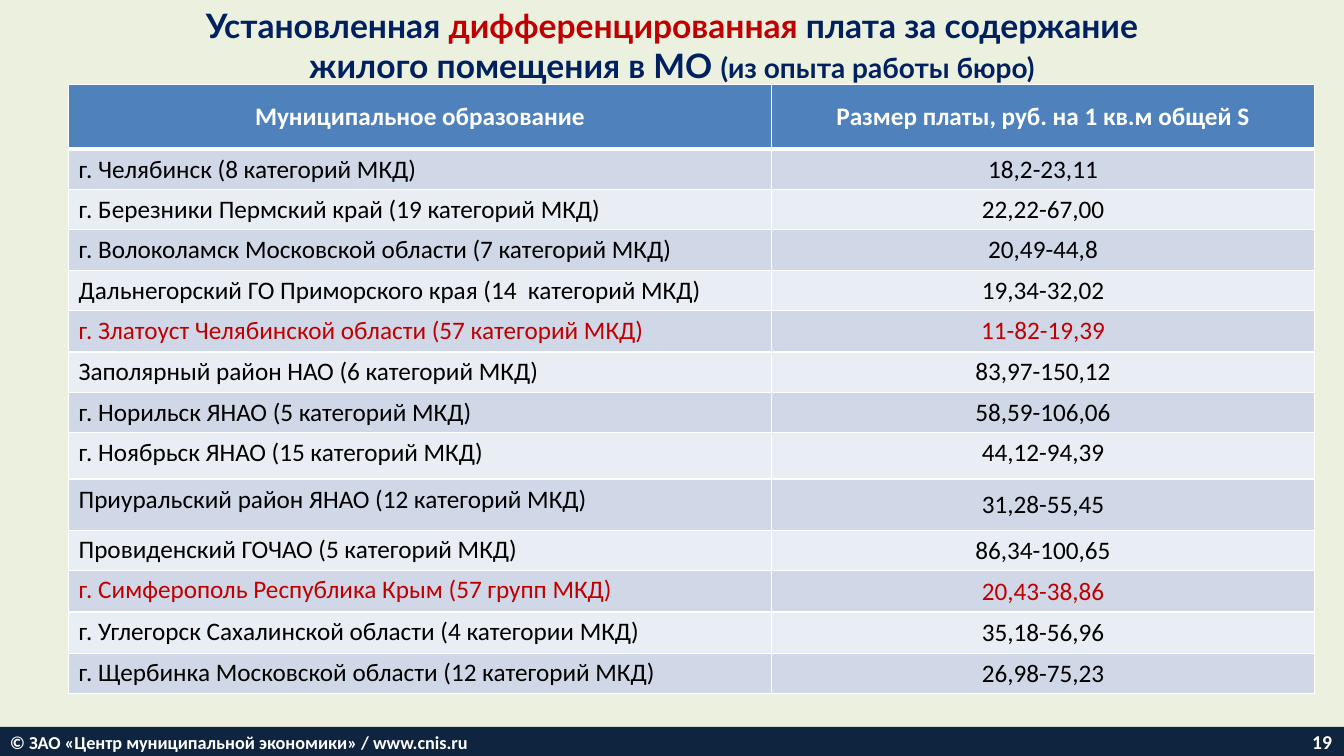
from collections import namedtuple

from lxml import etree
from pptx import Presentation
from pptx import util as u
from pptx.dml.color import RGBColor
from pptx.enum import shapes, text
from pptx.oxml import ns

WIDE, HIGH = 13.33, 7.5
Box = namedtuple("Box", "x y w h")


class Theme:
    page, navy, red = "EBF1DE", "002060", "C00000"
    head, bands = "4F81BD", ("D0D8E8", "E9EDF4")
    bar, white, black = "0F243E", "FFFFFF", "000000"
    body, display = "Calibri", "Lato"
    title, aside, cell, foot, num = 24, 20, 18, 13, 14


HEADS = ("Муниципальное образование", "Размер платы, руб. на 1 кв.м общей S")
# place, fee, row height
FEES = (
    ("г. Челябинск (8 категорий МКД)", "18,2-23,11", 0.39),
    ("г. Березники Пермский край (19 категорий МКД)", "22,22-67,00", 0.39),
    ("г. Волоколамск Московской области (7 категорий МКД)", "20,49-44,8", 0.39),
    ("Дальнегорский ГО Приморского края (14  категорий МКД)", "19,34-32,02", 0.39),
    ("г. Златоуст Челябинской области (57 категорий МКД)", "11-82-19,39", 0.41),
    ("Заполярный район НАО (6 категорий МКД)", "83,97-150,12", 0.39),
    ("г. Норильск ЯНАО (5 категорий МКД)", "58,59-106,06", 0.39),
    ("г. Ноябрьск ЯНАО (15 категорий МКД)", "44,12-94,39", 0.46),
    ("Приуральский район ЯНАО (12 категорий МКД)", "31,28-55,45", 0.51),
    ("Провиденский ГОЧАО (5 категорий МКД)", "86,34-100,65", 0.4),
    ("г. Симферополь Республика Крым (57 групп МКД)", "20,43-38,86", 0.41),
    ("г. Углегорск Сахалинской области (4 категории МКД)", "35,18-56,96", 0.41),
    ("г. Щербинка Московской области (12 категорий МКД)", "26,98-75,23", 0.39),
)
MARKED = {5, 11}  # rows set in red
TOP_FEE = 8  # row whose fee sits at the top
TIGHT = 10  # from this row on, places have no bottom margin


def rgb(code):
    return RGBColor.from_string(code)


def inch(box):
    return [u.Inches(v) for v in box]


def style(font, size, color, bold=True, face=Theme.body):
    font.name, font.size, font.bold = face, u.Pt(size), bold
    font.color.rgb = rgb(color)


def paint(item, color):
    item.fill.solid()
    item.fill.fore_color.rgb = rgb(color)


def border(cell, low=1):
    """White rules on all four sides, the bottom one low points wide."""
    props = cell._tc.get_or_add_tcPr()
    for at, (side, width) in enumerate(zip("LRTB", (1, 1, 1, low))):
        line = etree.Element(ns.qn("a:ln" + side), w=str(u.Pt(width)))
        fill = etree.SubElement(line, ns.qn("a:solidFill"))
        etree.SubElement(fill, ns.qn("a:srgbClr"), val=Theme.white)
        props.insert(at, line)


def title(slide, box):
    frame = slide.shapes.add_textbox(*inch(box)).text_frame
    frame.word_wrap = True
    para = frame.paragraphs[0]
    para.alignment = text.PP_ALIGN.CENTER
    for words, color, size in (
        ("Установленная ", Theme.navy, Theme.title),
        ("дифференцированная", Theme.red, Theme.title),
        (" плата за содержание жилого помещения в МО ", Theme.navy, Theme.title),
        ("(из опыта работы бюро)", Theme.navy, Theme.aside),
    ):
        run = para.add_run()
        run.text = words
        style(run.font, size, color, face=Theme.display)


def fill_cell(cell, words, row, col):
    head = row == 0
    color = Theme.white if head else Theme.red if row in MARKED else Theme.black
    cell.text = words
    para = cell.text_frame.paragraphs[0]
    style(para.font, Theme.cell, color, bold=head)
    if head or col:
        para.alignment = text.PP_ALIGN.CENTER
        if row != TOP_FEE:
            cell.vertical_anchor = text.MSO_ANCHOR.MIDDLE
    elif row >= TIGHT:
        cell.margin_top, cell.margin_bottom = u.Inches(0.04), 0
    paint(cell, Theme.head if head else Theme.bands[(row - 1) % 2])
    border(cell, 3 if head else 1)


def fee_table(slide, box):
    rows = (HEADS + (0.64,),) + FEES
    table = slide.shapes.add_table(len(rows), 2, *inch(box)).table
    for col, share in enumerate((0.564, 0.436)):
        table.columns[col].width = u.Inches(box.w * share)
    for row, (place, fee, tall) in enumerate(rows):
        table.rows[row].height = u.Inches(tall)
        for col, words in enumerate((place, fee)):
            fill_cell(table.cell(row, col), words, row, col)


def footer(slide, box):
    bar = slide.shapes.add_shape(shapes.MSO_SHAPE.RECTANGLE, *inch(box))
    bar.shadow.inherit = False
    paint(bar, Theme.bar)
    bar.line.fill.background()
    num = slide.shapes.add_textbox(
        *inch(Box(box.x + box.w - 2.35, box.y, 2.33, box.h)))
    left, right = text.PP_ALIGN.LEFT, text.PP_ALIGN.RIGHT
    top, middle = text.MSO_ANCHOR.TOP, text.MSO_ANCHOR.MIDDLE
    for shape, words, size, align, anchor in (
        (bar, "© ЗАО «Центр муниципальной экономики» / www.cnis.ru",
         Theme.foot, left, top),
        (num, "19", Theme.num, right, middle),
    ):
        frame = shape.text_frame
        frame.word_wrap, frame.vertical_anchor = True, anchor
        para = frame.paragraphs[0]
        para.text, para.alignment = words, align
        style(para.font, size, Theme.white)


def main():
    deck = Presentation()
    deck.slide_width, deck.slide_height = u.Inches(WIDE), u.Inches(HIGH)
    slide = deck.slides.add_slide(deck.slide_layouts[6])
    paint(slide.background, Theme.page)
    title(slide, Box(WIDE / 8, 0, WIDE * 0.75, 0.91))
    fee_table(slide, Box(0.68, 0.84, 12.36, 6.04))
    footer(slide, Box(0, HIGH - 0.29, WIDE, 0.29))
    deck.save("out.pptx")


if __name__ == "__main__":
    main()
